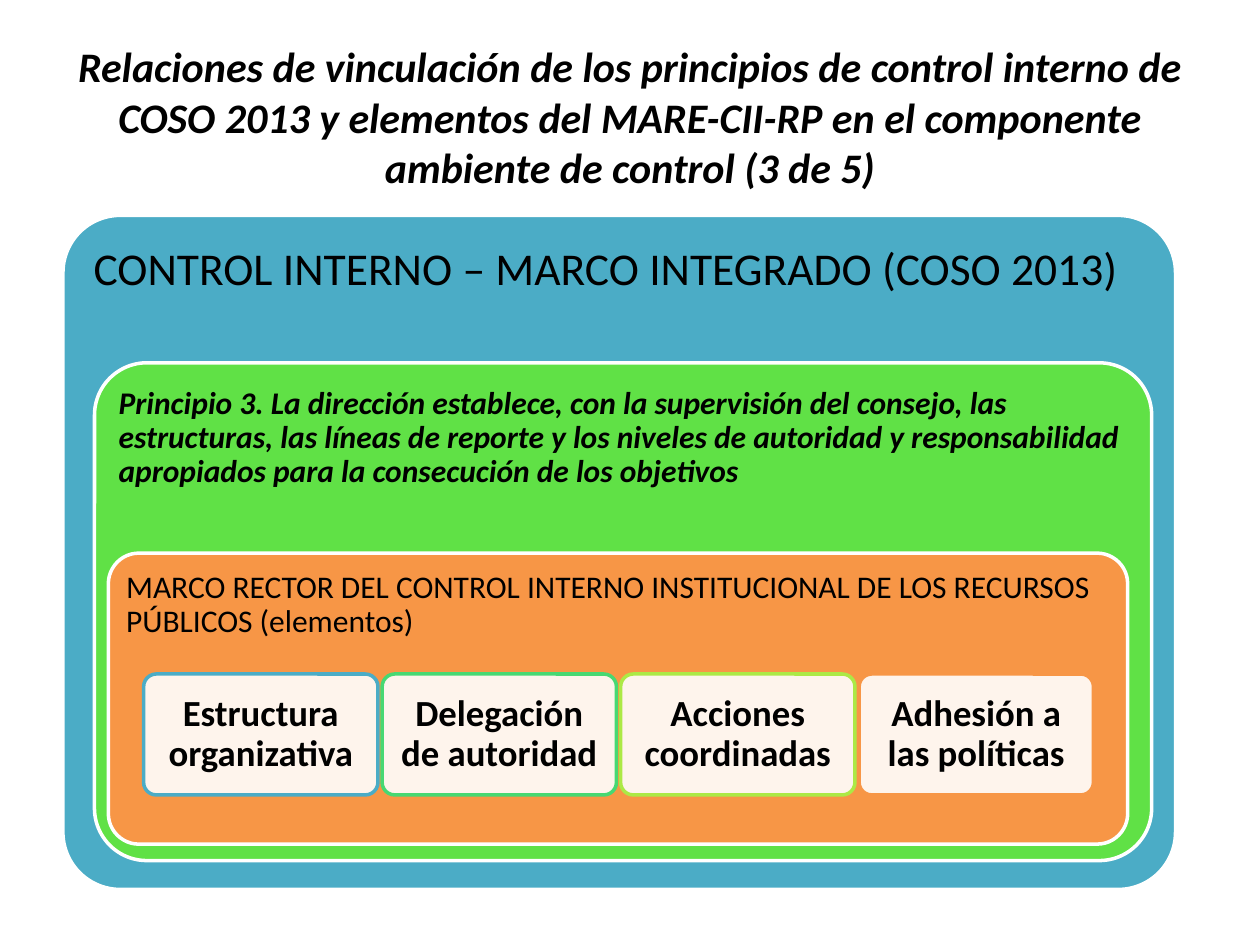
from lxml import etree
from pptx import Presentation
from pptx.dml.color import RGBColor
from pptx.enum.shapes import MSO_SHAPE
from pptx.enum.text import MSO_ANCHOR, PP_ALIGN
from pptx.oxml.ns import qn
from pptx.util import Inches, Pt

ROUND = MSO_SHAPE.ROUNDED_RECTANGLE
TOP, MIDDLE = MSO_ANCHOR.TOP, MSO_ANCHOR.MIDDLE
LEFT, CENTER = PP_ALIGN.LEFT, PP_ALIGN.CENTER

THEME = {
    "font": "Calibri", "text": "000000", "white": "FFFFFF",
    "blue": "4BACC6", "green": "60E146", "orange": "F79646",
    "mint": "47D872", "lime": "ACE946",
    "title": 24, "heading": 26, "body": 18, "element": 21,
    "line": 2, "opacity": 90,
}

TITLE = ("Relaciones de vinculación de los principios de control interno de "
         "COSO 2013 y elementos del MARE-CII-RP en el componente ambiente de "
         "control (3 de 5)")
TITLE_AREA = (5, 4, 90, 16.67)

PANELS = [
    {"text": "CONTROL INTERNO – MARCO INTEGRADO (COSO 2013)",
     "area": (5, 22.8, 88.3, 71.33), "fill": "blue", "size": "heading",
     "round": 0.085, "inset": 0.11, "strong": False},
    {"text": "Principio 3. La dirección establece, con la supervisión del "
             "consejo, las estructuras, las líneas de reporte y los niveles de "
             "autoridad y responsabilidad apropiados para la consecución de "
             "los objetivos",
     "area": (7.5, 38.4, 83.9, 52.67), "fill": "green", "size": "body",
     "round": 0.105, "inset": 0.07, "strong": True},
    {"text": "MARCO RECTOR DEL CONTROL INTERNO INSTITUCIONAL DE LOS RECURSOS "
             "PÚBLICOS (elementos)",
     "area": (8.6, 58.53, 80.9, 30.8), "fill": "orange", "size": "body",
     "round": 0.105, "inset": 0.07, "strong": False},
]

ELEMENTS = [
    ("Estructura organizativa", "blue"),
    ("Delegación de autoridad", "mint"),
    ("Acciones coordinadas", "lime"),
    ("Adhesión a las políticas", "orange"),
]
FIRST_ELEMENT = (11.4, 71.33, 18.6, 12.8)
ELEMENT_STEP = 18.93

prs = Presentation()
prs.slide_width, prs.slide_height = Inches(10), Inches(7.5)
slide = prs.slides.add_slide(prs.slide_layouts[6])


def color(name):
    return RGBColor.from_string(THEME[name])


def place(area):
    x, y, w, h = (share / 100 for share in area)
    return (int(x * prs.slide_width), int(y * prs.slide_height),
            int(w * prs.slide_width), int(h * prs.slide_height))


def write(sp, text, size, align, anchor, inset=0.1, bold=False, italic=False,
          spacing=1.0):
    tf = sp.text_frame
    tf.word_wrap = True
    tf.vertical_anchor = anchor
    tf.margin_left = tf.margin_right = Inches(inset)
    tf.margin_top = tf.margin_bottom = Inches(inset)
    p = tf.paragraphs[0]
    p.text = text
    p.alignment = align
    p.line_spacing = spacing
    p.font.name = THEME["font"]
    p.font.size = Pt(THEME[size])
    p.font.bold, p.font.italic = bold, italic
    p.font.color.rgb = color("text")


def add_box(area, fill, line, rounding):
    sp = slide.shapes.add_shape(ROUND, *place(area))
    sp.shadow.inherit = False
    sp.adjustments[0] = rounding
    sp.fill.solid()
    sp.fill.fore_color.rgb = color(fill)
    sp.line.color.rgb = color(line)
    sp.line.width = Pt(THEME["line"])
    return sp


def set_opacity(sp, percent):
    clr = sp._element.spPr.find(qn("a:solidFill")).find(qn("a:srgbClr"))
    etree.SubElement(clr, qn("a:alpha")).set("val", str(percent * 1000))


title = slide.shapes.add_textbox(*place(TITLE_AREA))
write(title, TITLE, "title", CENTER, MIDDLE, bold=True, italic=True)

for panel in PANELS:
    sp = add_box(panel["area"], panel["fill"], "white", panel["round"])
    write(sp, panel["text"], panel["size"], LEFT, TOP, panel["inset"],
          panel["strong"], panel["strong"], 0.9)

x, y, w, h = FIRST_ELEMENT
for i, (text, line) in enumerate(ELEMENTS):
    sp = add_box((x + i * ELEMENT_STEP, y, w, h), "white", line, 0.105)
    set_opacity(sp, THEME["opacity"])
    write(sp, text, "element", CENTER, MIDDLE, 0.09, bold=True, spacing=0.9)

prs.save("out.pptx")
